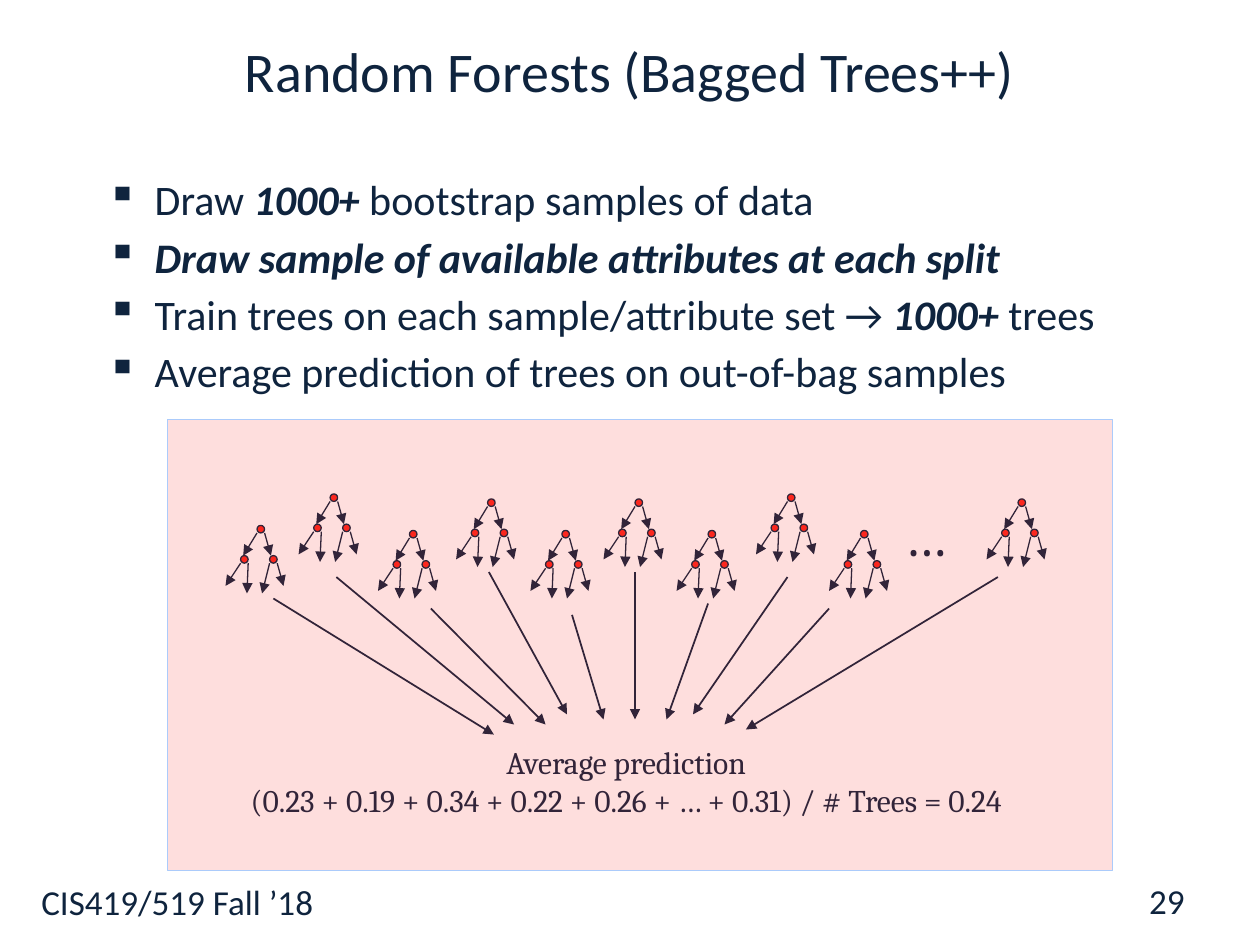
import pptx
import pptx.util
import pptx.dml.color
import pptx.enum.shapes
import pptx.enum.text
import pptx.oxml
import pptx.oxml.ns
from pptx.util import Inches

NAVY, RED = "0F243E", "FB271E"
ALIGN = pptx.enum.text.PP_ALIGN
ANCHOR = pptx.enum.text.MSO_ANCHOR
SHAPE = pptx.enum.shapes.MSO_SHAPE
NS = pptx.oxml.ns.nsdecls("a")


def color(hex_code):
    return pptx.dml.color.RGBColor.from_string(hex_code)


def add_arrow(shapes, x1, y1, x2, y2, width):
    c = shapes.add_connector(pptx.enum.shapes.MSO_CONNECTOR.STRAIGHT,
                             Inches(x1), Inches(y1), Inches(x2), Inches(y2))
    c.line.color.rgb = color(NAVY)
    c.line.width = pptx.util.Pt(width)
    c.line._get_or_add_ln().append(
        pptx.oxml.parse_xml(f'<a:tailEnd {NS} type="triangle"/>'))
    c._element.spPr.append(pptx.oxml.parse_xml(f"<a:effectLst {NS}/>"))


prs = pptx.Presentation()
prs.slide_width, prs.slide_height = Inches(10), Inches(7.5)
s = prs.slides.add_slide(prs.slide_layouts[5])

# Title
title = s.shapes.title
title.left, title.top = Inches(0.75), Inches(0.03)
title.width, title.height = Inches(8.5), Inches(1.05)
title.text_frame.text = "Random Forests (Bagged Trees++)"
title.text_frame.vertical_anchor = ANCHOR.MIDDLE
p = title.text_frame.paragraphs[0]
p.alignment = ALIGN.CENTER
f = p.runs[0].font
f.size, f.name, f.color.rgb = pptx.util.Pt(32), "Calibri", color(NAVY)

# Bullets: each run is (text, emphasised)
bullets = [
    [("Draw ", False), ("1000+", True), (" bootstrap samples of data", False)],
    [("Draw sample of available attributes at each split", True)],
    [("Train trees on each sample/attribute set → ", False), ("1000+", True),
     (" trees", False)],
    [("Average prediction of trees on out-of-bag samples", False)],
]
tf = s.shapes.add_textbox(Inches(0.75), Inches(1.33),
                          Inches(8.5), Inches(5.45)).text_frame
tf.word_wrap = True
for i, runs in enumerate(bullets):
    p = tf.paragraphs[0] if i == 0 else tf.add_paragraph()
    p.space_before = pptx.util.Pt(4)
    pPr = p._p.get_or_add_pPr()
    pPr.set("marL", str(Inches(0.38)))
    pPr.set("indent", str(Inches(-0.38)))
    pPr.append(pptx.oxml.parse_xml(f'<a:buChar {NS} char="▪"/>'))
    for text, emphasised in runs:
        r = p.add_run()
        r.text = text
        r.font.size, r.font.name = pptx.util.Pt(24), "Calibri"
        r.font.color.rgb = color(NAVY)
        r.font.bold = r.font.italic = emphasised

# Trees: root position of each, and the arrow from it to the average
trees = [
    (2.04, 4.17, (2.17, 4.75, 3.92, 5.83)),
    (2.62, 3.92, (2.67, 4.58, 4.08, 5.75)),
    (3.25, 4.21, (3.42, 4.83, 4.33, 5.75)),
    (3.87, 3.96, (3.88, 4.54, 4.5, 5.67)),
    (4.46, 4.21, (4.54, 4.88, 4.79, 5.71)),
    (5.04, 3.96, (5.04, 4.54, 5.04, 5.71)),
    (5.62, 4.21, (5.62, 4.79, 5.29, 5.71)),
    (6.25, 3.92, (6.25, 4.58, 5.5, 5.67)),
    (6.83, 4.21, (6.58, 4.83, 5.75, 5.75)),
    (8.08, 3.96, (7.92, 4.58, 5.92, 5.79)),
]
# Node offset from the root, then the tip offsets of its two branches
DOT = 0.06
nodes = [
    (0, 0, (-0.11, 0.24), (0.11, 0.24)),
    (0.1, 0.24, (0.04, 0.54), (0.21, 0.48)),
    (-0.13, 0.24, (-0.25, 0.48), (-0.08, 0.54)),
]
for x, y, vote in trees:
    tree = s.shapes.add_group_shape().shapes
    for dx, dy, left_tip, right_tip in nodes:
        left, top = x + dx, y + dy
        dot = tree.add_shape(SHAPE.OVAL, Inches(left), Inches(top),
                             Inches(DOT), Inches(DOT))
        dot.shadow.inherit = False
        dot.fill.solid()
        dot.fill.fore_color.rgb = color(RED)
        dot.line.color.rgb = color(NAVY)
        dot.line.width = pptx.util.Pt(0.75)
        for start, tip in ((left, left_tip), (left + DOT, right_tip)):
            add_arrow(tree, start, top + DOT, x + tip[0], y + tip[1], 0.75)
    add_arrow(s.shapes, *vote, 1)

# Single-format texts: box, text, size, font, alignment, anchor, wrap
labels = [
    ((7.08, 3.92, 0.65, 0.63), "…", 32, "Cambria", ALIGN.LEFT, ANCHOR.TOP, False),
    ((1.73, 5.85, 6.48, 0.7),
     "Average prediction\n"
     "(0.23 + 0.19 + 0.34 + 0.22 + 0.26 + … + 0.31) / # Trees = 0.24",
     18, "Cambria", ALIGN.CENTER, ANCHOR.TOP, False),
    ((0.23, 6.94, 9.6, 0.56), "CIS419/519 Fall ’18", 20, "Calibri",
     ALIGN.LEFT, ANCHOR.TOP, True),
    ((7.17, 6.95, 2.33, 0.4), "29", 20, "Calibri", ALIGN.RIGHT, ANCHOR.MIDDLE, True),
]
for box, text, size, font, align, anchor, wrap in labels:
    tf = s.shapes.add_textbox(*[Inches(v) for v in box]).text_frame
    tf.word_wrap = wrap
    tf.vertical_anchor = anchor
    tf.text = text
    for p in tf.paragraphs:
        p.alignment = align
        f = p.runs[0].font
        f.size, f.name, f.color.rgb = pptx.util.Pt(size), font, color(NAVY)

# Translucent panel over the forest
panel = s.shapes.add_shape(SHAPE.RECTANGLE, Inches(1.33), Inches(3.33),
                           Inches(7.5), Inches(3.58))
panel.shadow.inherit = False
panel.fill.solid()
panel.fill.fore_color.rgb = color(RED)
panel.fill._xPr.find(".//" + pptx.oxml.ns.qn("a:srgbClr")).append(
    pptx.oxml.parse_xml(f'<a:alpha {NS} val="15000"/>'))
panel.line.color.rgb = color("ABCBFB")
panel.line.width = pptx.util.Pt(1)

prs.save("out.pptx")
